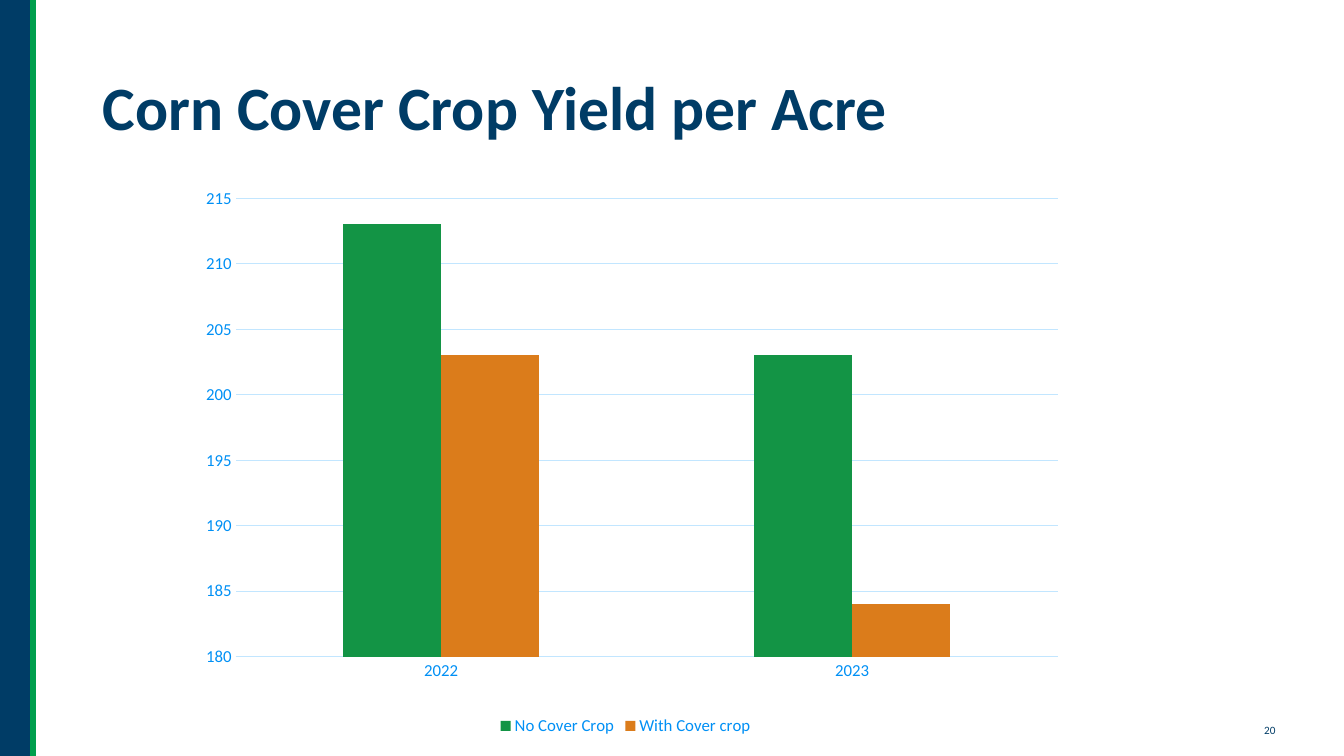
from lxml.etree import SubElement
from pptx import Presentation
from pptx.chart.data import CategoryChartData
from pptx.dml.color import RGBColor
from pptx.enum.chart import XL_CHART_TYPE as ChartType, XL_LEGEND_POSITION as LegendPosition
from pptx.enum.chart import XL_TICK_MARK as TickMark
from pptx.enum.shapes import MSO_CONNECTOR as Connector, MSO_SHAPE as Shape
from pptx.enum.text import MSO_ANCHOR as Anchor, MSO_AUTO_SIZE as AutoSize, PP_ALIGN as Align
from pptx.oxml import parse_xml
from pptx.oxml.ns import nsdecls, qn
from pptx.util import Inches, Pt

COLORS = {
    "navy": "003C66",
    "stripe": "009F4D",
    "label": "0090F5",
    "grid": "C2E6FF",
    "no_cover": "139445",
    "with_cover": "DB7C1B",
}


class SlideBuilder:
    font_name = "Calibri"

    def __init__(self, slide):
        self.slide = slide
        self.shapes = slide.shapes

    def color(self, name):
        return RGBColor.from_string(COLORS[name])

    def box(self, *lengths):
        return [Inches(length) for length in lengths]

    def style_font(self, font, size, color, bold=False):
        font.name = self.font_name
        font.size = Pt(size)
        font.bold = bold
        font.color.rgb = self.color(color)

    def style_line(self, line, color, width):
        line.color.rgb = self.color(color)
        line.width = Pt(width)

    def title(self, text, *lengths):
        heading = self.shapes.title
        heading.left, heading.top, heading.width, heading.height = self.box(*lengths)
        frame = heading.text_frame
        frame.auto_size = AutoSize.NONE
        frame.vertical_anchor = Anchor.MIDDLE
        paragraph = frame.paragraphs[0]
        paragraph.alignment = Align.LEFT
        paragraph.line_spacing = 0.9
        run = paragraph.add_run()
        run.text = text
        self.style_font(run.font, 44, "navy", bold=True)

    def text(self, text, size, color, *lengths):
        frame = self.shapes.add_textbox(*self.box(*lengths)).text_frame
        frame.word_wrap = False
        run = frame.paragraphs[0].add_run()
        run.text = text
        self.style_font(run.font, size, color)

    def band(self, color, *lengths):
        band = self.shapes.add_shape(Shape.RECTANGLE, *self.box(*lengths))
        band.shadow.inherit = False
        band.fill.solid()
        band.fill.fore_color.rgb = self.color(color)
        band.line.fill.background()

    def line(self, color, width, *ends):
        stripe = self.shapes.add_connector(Connector.STRAIGHT, *self.box(*ends))
        self.style_line(stripe.line, color, width)
        SubElement(stripe._element.spPr, qn("a:effectLst"))

    def column_chart(self, categories, series, plot, *lengths):
        data = CategoryChartData()
        data.categories = categories
        for name, values, _ in series:
            data.add_series(name, values)
        chart = self.shapes.add_chart(ChartType.COLUMN_CLUSTERED, *self.box(*lengths), data).chart
        chart.has_title = False
        self.style_font(chart.font, 10, "navy")

        columns = chart.plots[0]
        columns.gap_width = 219
        columns.overlap = 0
        columns.vary_by_categories = False
        for column, (_, _, color) in zip(columns.series, series):
            column.format.fill.solid()
            column.format.fill.fore_color.rgb = self.color(color)

        for axis in (chart.category_axis, chart.value_axis):
            axis.major_tick_mark = axis.minor_tick_mark = TickMark.NONE
            self.style_font(axis.tick_labels.font, 12, "label")
        self.style_line(chart.category_axis.format.line, "grid", 0.75)
        yields = chart.value_axis
        yields.minimum_scale, yields.maximum_scale, yields.major_unit = 180, 215, 5
        yields.format.line.fill.background()
        self.style_line(yields.major_gridlines.format.line, "grid", 0.75)

        chart.has_legend = True
        chart.legend.position = LegendPosition.BOTTOM
        chart.legend.include_in_layout = False
        self.style_font(chart.legend.font, 12, "label")
        self.plot_layout(chart, plot)

    def plot_layout(self, chart, plot):
        area = chart._chartSpace.chart.plotArea
        for layout in area.findall(qn("c:layout")):
            area.remove(layout)
        sizes = "".join(f'<c:{tag} val="{value}"/>' for tag, value in zip("xywh", plot))
        area.insert(0, parse_xml(
            f'<c:layout {nsdecls("c")}><c:manualLayout><c:layoutTarget val="inner"/>'
            f'<c:xMode val="edge"/><c:yMode val="edge"/>{sizes}</c:manualLayout></c:layout>'
        ))


def main():
    deck = Presentation()
    deck.slide_width, deck.slide_height = Inches(13.33), Inches(7.5)
    builder = SlideBuilder(deck.slides.add_slide(deck.slide_layouts[5]))

    builder.text("20", 8, "navy", 12.44, 7.13, 0.34, 0.24)
    builder.band("navy", 0, 0, 0.33, 7.5)
    builder.line("stripe", 4.5, 0.33, 0, 0.33, 7.5)
    builder.title("Corn Cover Crop Yield per Acre", 0.92, 0.37, 11.5, 1.45)
    builder.column_chart(
        ["2022", "2023"],
        [
            ("No Cover Crop", (213, 203), "no_cover"),
            ("With Cover crop", (203, 184), "with_cover"),
        ],
        (0.065, 0.094, 0.917, 0.767),
        1.76, 1.41, 8.89, 5.93,
    )
    deck.save("out.pptx")


if __name__ == "__main__":
    main()
